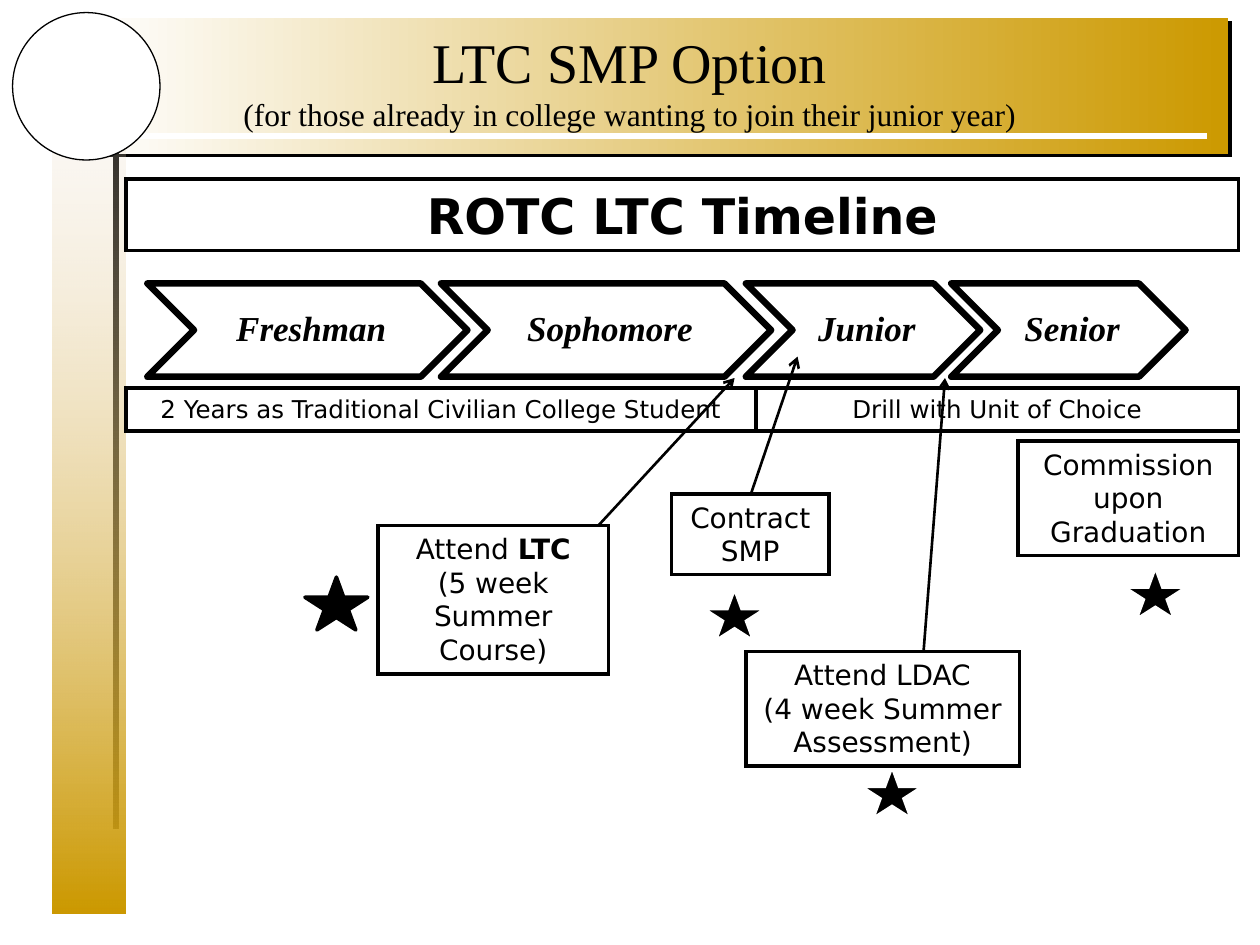
from lxml import etree
from pptx import Presentation
from pptx.dml.color import RGBColor
from pptx.enum.shapes import MSO_CONNECTOR, MSO_SHAPE as SHAPE
from pptx.enum.text import MSO_ANCHOR, MSO_AUTO_SIZE, PP_ALIGN
from pptx.oxml import parse_xml
from pptx.oxml.ns import nsdecls, qn
from pptx.util import Inches, Pt

SERIF, SANS = "Times New Roman", "DejaVu Sans"
BLACK, WHITE, GOLD = "000000", "FFFFFF", "CC9900"


def rgb(value):
    return RGBColor.from_string(value)


def add_shape(slide, kind, box, fill=None, line=None, width=2, join="miter"):
    s = slide.shapes.add_shape(kind, *map(Inches, box))
    s.shadow.inherit = False
    if fill:
        s.fill.solid()
        s.fill.fore_color.rgb = rgb(fill)
    else:
        s.fill.background()
    if line:
        s.line.color.rgb = rgb(line)
        s.line.width = Pt(width)
        etree.SubElement(s.line._get_or_add_ln(), qn(f"a:{join}"))
    else:
        s.line.fill.background()
    return s


def add_line(slide, start, end, color=BLACK, width=3.0, arrow=False):
    c = slide.shapes.add_connector(MSO_CONNECTOR.STRAIGHT, *map(Inches, start + end))
    c.line.color.rgb = rgb(color)
    c.line.width = Pt(width)
    if arrow:
        etree.SubElement(c.line._get_or_add_ln(), qn("a:tailEnd"), type="arrow")
    etree.SubElement(c._element.spPr, qn("a:effectLst"))


def add_run(p, text, size, font=SANS, **style):
    r = p.add_run()
    r.text = text
    r.font.color.rgb = rgb(BLACK)
    for name, value in dict(size=Pt(size), name=font, bold=False, **{}).items() | style.items():
        setattr(r.font, name, value)
    for name, value in style.items():
        setattr(r.font, name, value)


def set_gradient(s, start, end, angle):
    s.fill.gradient()
    s.fill.gradient_angle = angle
    for stop, color, position in zip(s.fill.gradient_stops, (start, end), (0, 1)):
        stop.color.rgb = rgb(color)
        stop.position = position


def add_frame(slide):
    # Title band with a hard offset shadow
    band = add_shape(slide, SHAPE.RECTANGLE, (0.83, 0.14, 8.92, 1.08))
    set_gradient(band, "FEFDFB", GOLD, 0)
    sp_pr = band._element.spPr
    sp_pr.remove(sp_pr.find(qn("a:effectLst")))
    sp_pr.append(parse_xml(
        f'<a:effectLst {nsdecls("a")}><a:outerShdw dist="35560" dir="2700000" algn="ctr" '
        f'rotWithShape="0"><a:srgbClr val="{BLACK}"/></a:outerShdw></a:effectLst>'))

    # Side bar, translucent at the top, over a dark rule
    add_line(slide, (0.92, 6.58), (0.92, 1))
    bar = add_shape(slide, SHAPE.RECTANGLE, (0.42, 0.83, 0.58, 6.42))
    set_gradient(bar, "EFE2D4", GOLD, 270)
    first_color = next(bar._element.spPr.iter(qn("a:srgbClr")))
    etree.SubElement(first_color, qn("a:alpha"), val="19000")

    # White rule and corner disc
    add_line(slide, (1.08, 1.08), (9.58, 1.08), WHITE)
    add_shape(slide, SHAPE.OVAL, (0.1, 0.1, 1.17, 1.17), WHITE, BLACK, 0.75)


def add_title(slide, box, heading, subtitle):
    title = slide.shapes.title
    title.left, title.top, title.width, title.height = map(Inches, box)
    slide.shapes._spTree.append(title._element)  # in front of the frame
    tf = title.text_frame
    tf.vertical_anchor = MSO_ANCHOR.TOP
    tf.auto_size = MSO_AUTO_SIZE.NONE
    p = tf.paragraphs[0]
    p.alignment = PP_ALIGN.CENTER
    add_run(p, heading, 32, SERIF)
    p.add_line_break()
    add_run(p, subtitle, 18, SERIF)


def add_chevron(slide, box, year):
    s = add_shape(slide, SHAPE.CHEVRON, box, line=BLACK, width=3.75, join="round")
    tf = s.text_frame
    margins = dict(margin_left=0.09, margin_top=0.03, margin_right=0.03, margin_bottom=0.03)
    for name, value in margins.items():
        setattr(tf, name, Inches(value))
    tf.vertical_anchor = MSO_ANCHOR.MIDDLE
    p = tf.paragraphs[0]
    p.alignment = PP_ALIGN.CENTER
    p.line_spacing = 0.9
    add_run(p, year, 20, SERIF, bold=True, italic=True)


def add_label(slide, box, paragraphs, size=16):
    """Outlined box; each paragraph is a list of (text, bold) runs."""
    s = add_shape(slide, SHAPE.RECTANGLE, box, line=BLACK)
    tf = s.text_frame
    tf.word_wrap = True
    tf.auto_size = MSO_AUTO_SIZE.SHAPE_TO_FIT_TEXT
    tf.vertical_anchor = MSO_ANCHOR.TOP
    for i, runs in enumerate(paragraphs):
        p = tf.add_paragraph() if i else tf.paragraphs[0]
        p.alignment = PP_ALIGN.CENTER
        for text, bold in runs:
            add_run(p, text, size, bold=bold)


def add_timeline(slide, left, width):
    # Heading
    add_label(slide, (left, 1.42, width, 0.57), [[("ROTC LTC Timeline", True)]], 28)

    # College years
    years = [("Freshman", 1.17, 2.54), ("Sophomore", 3.5, 2.62),
             ("Junior", 5.92, 1.86), ("Senior", 7.55, 1.86)]
    for year, x, w in years:
        add_chevron(slide, (x, 2.25, w, 0.74), year)

    # Phases
    split = 5
    add_label(slide, (left, 3.08, split, 0.34),
              [[("2 Years as Traditional Civilian College Student", False)]], 14)
    add_label(slide, (left + split, 3.08, width - split, 0.34),
              [[("Drill with Unit of Choice", False)]], 14)


def add_milestones(slide):
    # Stars
    for x, y, outline, join in [(5.58, 4.67, WHITE, "miter"), (8.92, 4.5, WHITE, "miter"),
                                (2.42, 4.58, BLACK, "round"), (6.83, 6.08, WHITE, "miter")]:
        add_shape(slide, SHAPE.STAR_5_POINT, (x, y, 0.5, 0.42), BLACK, outline, join=join)

    # Notes
    add_label(slide, (3, 4.17, 1.83, 1.18),
              [[("Attend ", False), ("LTC", True)], [("(5 week Summer Course)", False)]])
    add_label(slide, (5.33, 3.92, 1.25, 0.64), [[("Contract SMP", False)]])
    add_label(slide, (5.92, 5.17, 2.17, 0.91),
              [[("Attend LDAC", False)], [("(4 week Summer Assessment)", False)]])
    add_label(slide, (8.08, 3.5, 1.75, 0.91), [[("Commission upon Graduation", False)]])

    # Arrows to the timeline
    for start, end in [((4.75, 4.17), (5.83, 3)), ((7.33, 5.17), (7.5, 3)),
                       ((5.96, 3.92), (6.33, 2.83))]:
        add_line(slide, start, end, width=1.5, arrow=True)


def main():
    prs = Presentation()
    prs.slide_width, prs.slide_height = Inches(10), Inches(7.5)
    slide = prs.slides.add_slide(prs.slide_layouts[5])
    add_frame(slide)
    add_title(slide, (0.5, 0.17, 9, 1.25), "LTC SMP Option",
              "(for those already in college wanting to join their junior year)")
    add_timeline(slide, 1, 8.83)
    add_milestones(slide)
    prs.save("out.pptx")


if __name__ == "__main__":
    main()
